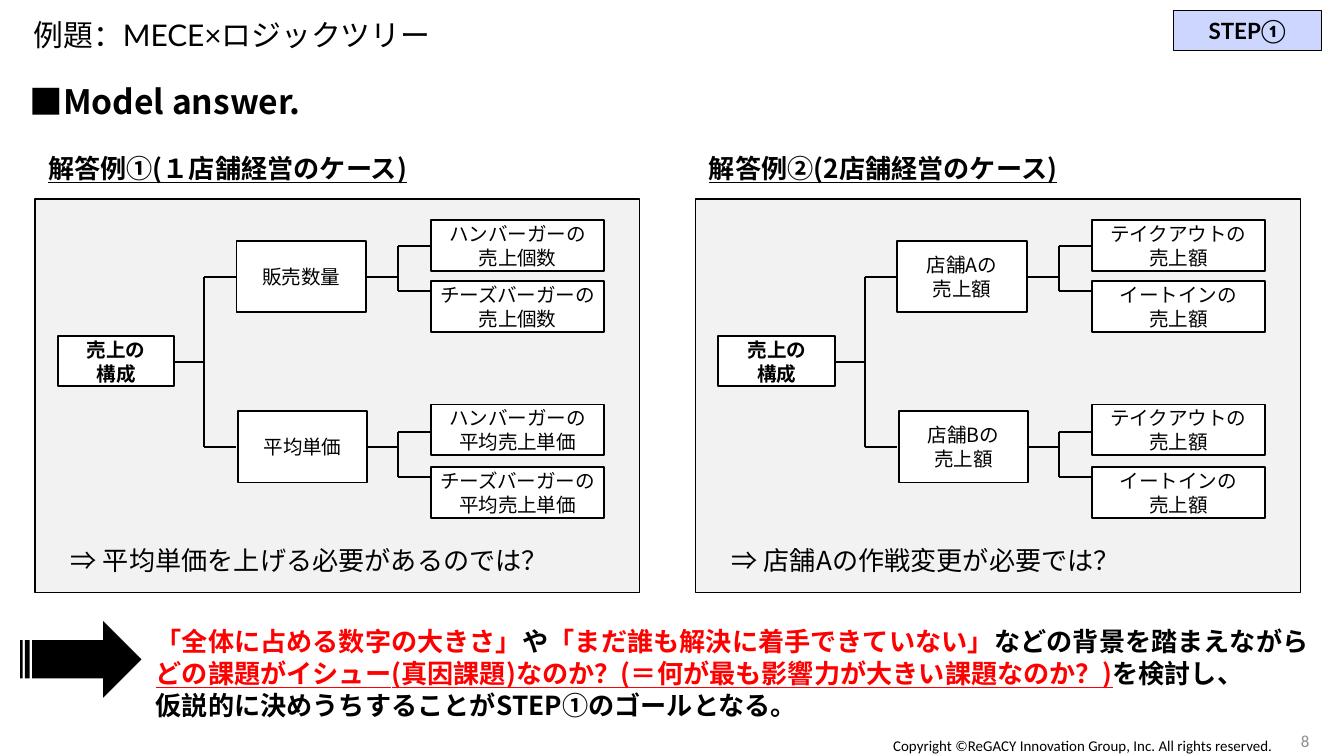
"""Build the model answer slide with two sales logic trees."""
from lxml.etree import SubElement
from pptx import Presentation
from pptx.dml.color import RGBColor
from pptx.enum.shapes import MSO_CONNECTOR, MSO_SHAPE
from pptx.enum.text import MSO_ANCHOR, MSO_AUTO_SIZE, PP_ALIGN
from pptx.oxml.ns import qn
from pptx.util import Pt

COLORS = {"black": "000000", "white": "FFFFFF", "panel": "F2F2F2",
          "badge": "CDD6FF", "red": "FF0000", "gray": "8C8C8C"}
JAPANESE = "Noto Sans CJK JP"
LINE_RATIO = 1.22
PANEL_STEP = 354

CASES = [
    {"heading": "解答例①(１店舗経営のケース)",
     "branches": ["販売数量", "平均単価"],
     "leaves": [["ハンバーガーの\v売上個数", "チーズバーガーの\v売上個数"],
                ["ハンバーガーの\v平均売上単価", "チーズバーガーの\v平均売上単価"]],
     "finding": "⇒ 平均単価を上げる必要があるのでは？"},
    {"heading": "解答例②(2店舗経営のケース)",
     "branches": ["店舗Aの\v売上額", "店舗Bの\v売上額"],
     "leaves": [["テイクアウトの\v売上額", "イートインの\v売上額"]] * 2,
     "finding": "⇒ 店舗Aの作戦変更が必要では？"},
]

CONCLUSION = [
    [("「全体に占める数字の大きさ」", "red", False), ("や", "black", False),
     ("「まだ誰も解決に着手できていない」", "red", False),
     ("などの背景を踏まえながら", "black", False)],
    [("どの課題がイシュー(真因課題)なのか？(＝何が最も影響力が大きい課題なのか？)", "red", True),
     ("を検討し、", "black", False)],
    [("仮説的に決めうちすることがSTEP①のゴールとなる。", "black", False)],
]


def color(name):
    return RGBColor.from_string(COLORS[name])


def format_run(run, size, font=JAPANESE, ink="black", bold=False, underline=False):
    run.font.size = Pt(size)
    run.font.name = font
    run.font.bold = bold
    run.font.underline = underline
    run.font.color.rgb = color(ink)
    if font == JAPANESE:
        SubElement(run.font._element, qn("a:ea")).set("typeface", font)


def format_text(text_frame, size, align=PP_ALIGN.LEFT, font=JAPANESE, **style):
    for paragraph in text_frame.paragraphs:
        paragraph.alignment = align
        if font == JAPANESE:
            paragraph.line_spacing = Pt(round(size * LINE_RATIO, 1))
        for run in paragraph.runs:
            format_run(run, size, font, **style)


def add_text(slide, box, text, size, anchor=MSO_ANCHOR.TOP, **style):
    text_frame = slide.shapes.add_textbox(*map(Pt, box)).text_frame
    text_frame.word_wrap = True
    text_frame.vertical_anchor = anchor
    text_frame.text = text
    format_text(text_frame, size, **style)
    return text_frame


def add_block(slide, box, fill, line_width=None, preset=MSO_SHAPE.RECTANGLE):
    shape = slide.shapes.add_shape(preset, *map(Pt, box))
    shape.shadow.inherit = False
    shape.fill.solid()
    shape.fill.fore_color.rgb = color(fill)
    if line_width:
        shape.line.color.rgb = color("black")
        shape.line.width = Pt(line_width)
    else:
        shape.line.fill.background()
    return shape


def add_node(slide, box, text, bold=False):
    text_frame = add_block(slide, box, "white", 1).text_frame
    text_frame.word_wrap = False
    text_frame.vertical_anchor = MSO_ANCHOR.MIDDLE
    text_frame.text = text
    format_text(text_frame, 10.5, PP_ALIGN.CENTER, bold=bold)


def add_line(slide, *ends):
    connector = slide.shapes.add_connector(MSO_CONNECTOR.STRAIGHT, *map(Pt, ends))
    connector.line.color.rgb = color("black")
    connector.line.width = Pt(1)
    SubElement(connector._element.spPr, qn("a:effectLst"))


def add_fork(slide, stem_left, stem_y, trunk, right, ends):
    add_line(slide, stem_left, stem_y, trunk, stem_y)
    add_line(slide, trunk, ends[0], trunk, ends[1])
    for y in ends:
        add_line(slide, trunk, y, right, y)


def add_tree(slide, left, case):
    add_fork(slide, left + 74, 193.9, left + 90.6, left + 108, (148.3, 239.6))
    add_node(slide, (left + 12.2, 180, 62.6, 27), "売上の\n構成", bold=True)
    levels = [(108, 129, 148.3, (131.8, 156), (118, 150.6)),
              (108.7, 220.3, 239.6, (231.3, 255.6), (216.7, 250.4))]
    for branch, leaves, level in zip(case["branches"], case["leaves"], levels):
        branch_left, top, middle, ends, leaf_tops = level
        add_fork(slide, left + 177, middle, left + 194.5, left + 212, ends)
        add_node(slide, (left + branch_left, top, 69.4, 38.2), branch)
        for leaf, leaf_top in zip(leaves, leaf_tops):
            add_node(slide, (left + 212.4, leaf_top, 92.4, 27.2), leaf)


def add_case(slide, left, case):
    add_block(slide, (left, 106.6, 324, 211), "panel", 0.75)
    add_text(slide, (left, 77.8, 324, 24.5), case["heading"], 14,
             bold=True, underline=True)
    add_tree(slide, left, case)
    add_text(slide, (left + 12.2, 288, 301, 24.5), case["finding"], 14)


def add_conclusion(slide):
    text_frame = add_text(slide, (76.3, 331.2, 632.2, 58.3), "", 14)
    text_frame.margin_right = Pt(0)
    for index, parts in enumerate(CONCLUSION):
        paragraph = text_frame.add_paragraph() if index else text_frame.paragraphs[0]
        paragraph.line_spacing = Pt(round(14 * LINE_RATIO, 1))
        for text, ink, underline in parts:
            run = paragraph.add_run()
            run.text = text
            format_run(run, 14, ink=ink, bold=True, underline=underline)
    add_block(slide, (10.8, 332.8, 65, 41), "black",
              preset=MSO_SHAPE.STRIPED_RIGHT_ARROW)


def set_title(slide):
    title = slide.shapes.title
    title.left, title.top, title.width, title.height = map(Pt, (10.8, 9.2, 697, 21.6))
    text_frame = title.text_frame
    text_frame.text = "例題：MECE×ロジックツリー"
    text_frame.auto_size = MSO_AUTO_SIZE.NONE
    text_frame.vertical_anchor = MSO_ANCHOR.MIDDLE
    text_frame.paragraphs[0].line_spacing = 0.9
    format_text(text_frame, 16, font="Lato")


def add_badge(slide):
    text_frame = add_block(slide, (628.6, 5.6, 79.2, 21.6), "badge", 0.5).text_frame
    text_frame.vertical_anchor = MSO_ANCHOR.MIDDLE
    text_frame.text = "STEP①"
    format_text(text_frame, 12, PP_ALIGN.CENTER, "Lato", bold=True)


def add_footer(slide):
    add_text(slide, (454.3, 391, 234.7, 17.3),
             "Copyright ©ReGACY Innovation Group, Inc. All rights reserved.", 8,
             align=PP_ALIGN.RIGHT, font="Calibri")
    add_text(slide, (679.7, 386, 28.8, 21.6), "8", 9, MSO_ANCHOR.MIDDLE,
             align=PP_ALIGN.RIGHT, font="Calibri", ink="gray")


def main():
    presentation = Presentation()
    presentation.slide_width, presentation.slide_height = Pt(720), Pt(405)
    slide = presentation.slides.add_slide(presentation.slide_layouts[5])
    set_title(slide)
    for index, case in enumerate(CASES):
        add_case(slide, 18.7 + index * PANEL_STEP, case)
    add_conclusion(slide)
    heading = add_text(slide, (10.8, 39.6, 570, 27.4), "■Model answer.", 18, bold=True)
    heading.margin_left = Pt(5)
    add_badge(slide)
    add_footer(slide)
    presentation.save("out.pptx")


if __name__ == "__main__":
    main()
